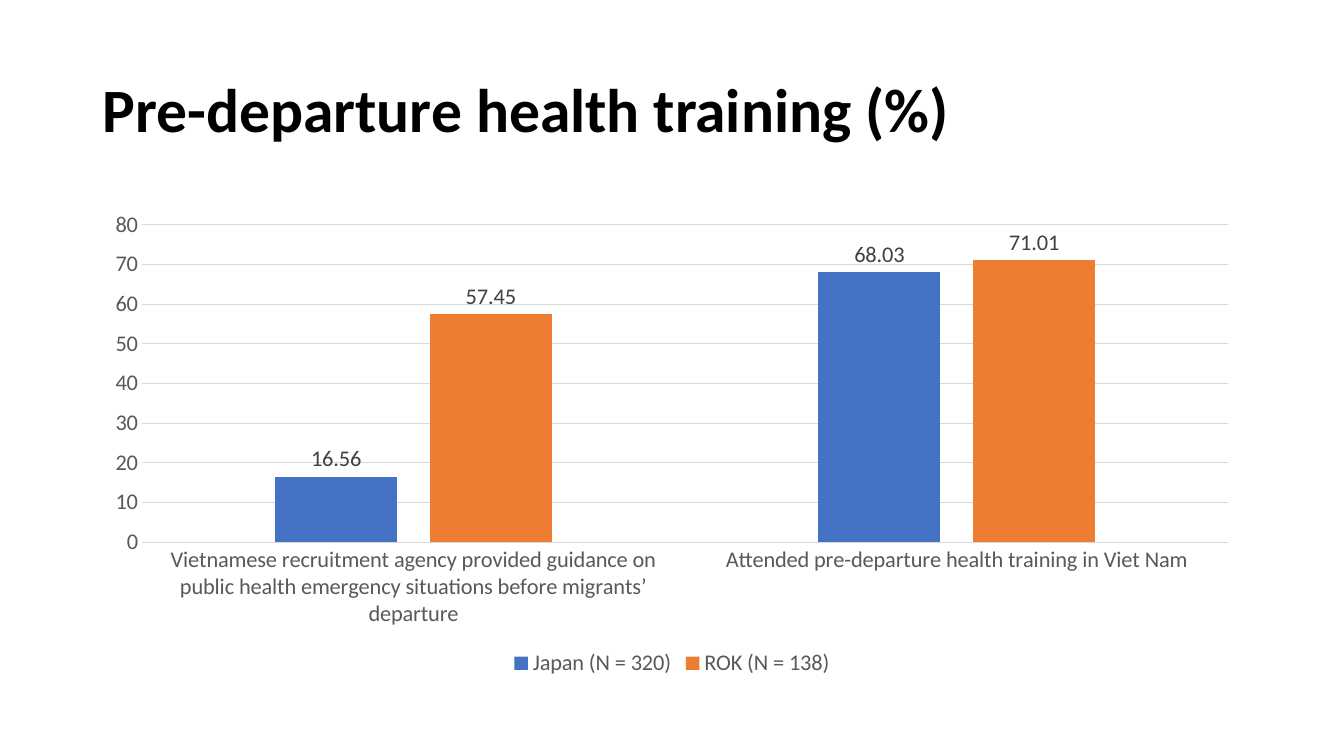
"""Builds a slide with a column chart on pre-departure health training."""
import pptx
import pptx.chart.data
import pptx.dml.color
import pptx.enum.chart
import pptx.enum.text
import pptx.util

RGB = pptx.dml.color.RGBColor
BLACK = RGB(0x00, 0x00, 0x00)
AXIS_GREY = RGB(0x59, 0x59, 0x59)
LABEL_GREY = RGB(0x40, 0x40, 0x40)
GRID_GREY = RGB(0xD9, 0xD9, 0xD9)
BLUE = RGB(0x44, 0x72, 0xC4)
ORANGE = RGB(0xED, 0x7D, 0x31)

EMU_PER_PX = 9525
QUESTIONS = [
    "Vietnamese recruitment agency provided guidance on public health "
    "emergency situations before migrants’ departure",
    "Attended pre-departure health training in Viet Nam",
]
COUNTRIES = [
    ("Japan (N = 320)", (16.56, 68.03), BLUE),
    ("ROK (N = 138)", (57.45, 71.01), ORANGE),
]


def px(length):
    """Turn whole pixels into EMU."""
    return pptx.util.Emu(length * EMU_PER_PX)


def assign(target, values):
    """Set each named attribute on the target."""
    for name, value in values.items():
        setattr(target, name, value)


class SlideBuilder:
    """Holds the style and the slide being built."""

    font_name = "Calibri"
    title_size = 44
    chart_size = 16

    def __init__(self, slide):
        self.slide = slide

    def style_font(self, font, size, color, bold=False):
        """Apply the deck's typeface with the given size and colour."""
        assign(font, {"name": self.font_name, "size": pptx.util.Pt(size), "bold": bold})
        font.color.rgb = color

    def style_line(self, line):
        """Apply the thin grey rule used by the chart."""
        line.color.rgb = GRID_GREY
        line.width = pptx.util.Pt(0.75)

    def title(self, text, left, top, width, height):
        """Place and format the title placeholder."""
        heading = self.slide.shapes.title
        assign(heading, {"left": px(left), "top": px(top),
                         "width": px(width), "height": px(height)})
        heading.text_frame.text = text
        assign(heading.text_frame, {
            "word_wrap": True,
            "vertical_anchor": pptx.enum.text.MSO_ANCHOR.MIDDLE,
        })
        paragraph = heading.text_frame.paragraphs[0]
        assign(paragraph, {"alignment": pptx.enum.text.PP_ALIGN.LEFT, "line_spacing": 0.9})
        self.style_font(paragraph.runs[0].font, self.title_size, BLACK, bold=True)

    def column_chart(self, categories, series_rows, left, top, width, height):
        """Add a clustered column chart with value labels."""
        data = pptx.chart.data.CategoryChartData()
        data.categories = categories
        for name, values, _ in series_rows:
            data.add_series(name, values)
        chart = self.slide.shapes.add_chart(
            pptx.enum.chart.XL_CHART_TYPE.COLUMN_CLUSTERED,
            px(left), px(top), px(width), px(height), data).chart
        assign(chart, {"has_title": False, "has_legend": True})
        self.style_font(chart.font, self.chart_size, BLACK)
        assign(chart.legend, {
            "position": pptx.enum.chart.XL_LEGEND_POSITION.BOTTOM,
            "include_in_layout": False,
        })
        self.style_font(chart.legend.font, self.chart_size, AXIS_GREY)
        self.axes(chart)

        columns = chart.plots[0]
        assign(columns, {"gap_width": 219, "overlap": -27, "vary_by_categories": False})
        for series, (_, _, color) in zip(columns.series, series_rows):
            series.format.fill.solid()
            series.format.fill.fore_color.rgb = color
            assign(series.data_labels, {
                "show_value": True,
                "position": pptx.enum.chart.XL_LABEL_POSITION.OUTSIDE_END,
            })
            self.style_font(series.data_labels.font, self.chart_size, LABEL_GREY)

    def axes(self, chart):
        """Format both axes and the gridlines."""
        no_tick = pptx.enum.chart.XL_TICK_MARK.NONE
        for axis in (chart.category_axis, chart.value_axis):
            assign(axis, {"major_tick_mark": no_tick, "minor_tick_mark": no_tick})
            self.style_font(axis.tick_labels.font, self.chart_size, AXIS_GREY)
        self.style_line(chart.category_axis.format.line)
        assign(chart.value_axis, {"minimum_scale": 0, "maximum_scale": 80,
                                  "major_unit": 10, "has_major_gridlines": True})
        chart.value_axis.format.line.fill.background()
        self.style_line(chart.value_axis.major_gridlines.format.line)


def main():
    """Build and save the presentation."""
    deck = pptx.Presentation()
    assign(deck, {"slide_width": px(1280), "slide_height": px(720)})
    title_only = deck.slide_layouts.get_by_name("Title Only")
    builder = SlideBuilder(deck.slides.add_slide(title_only))
    builder.title("Pre-departure health training (%)", 88, 38, 1104, 139)
    builder.column_chart(QUESTIONS, COUNTRIES, 88, 192, 1104, 457)
    deck.save("out.pptx")


if __name__ == "__main__":
    main()
